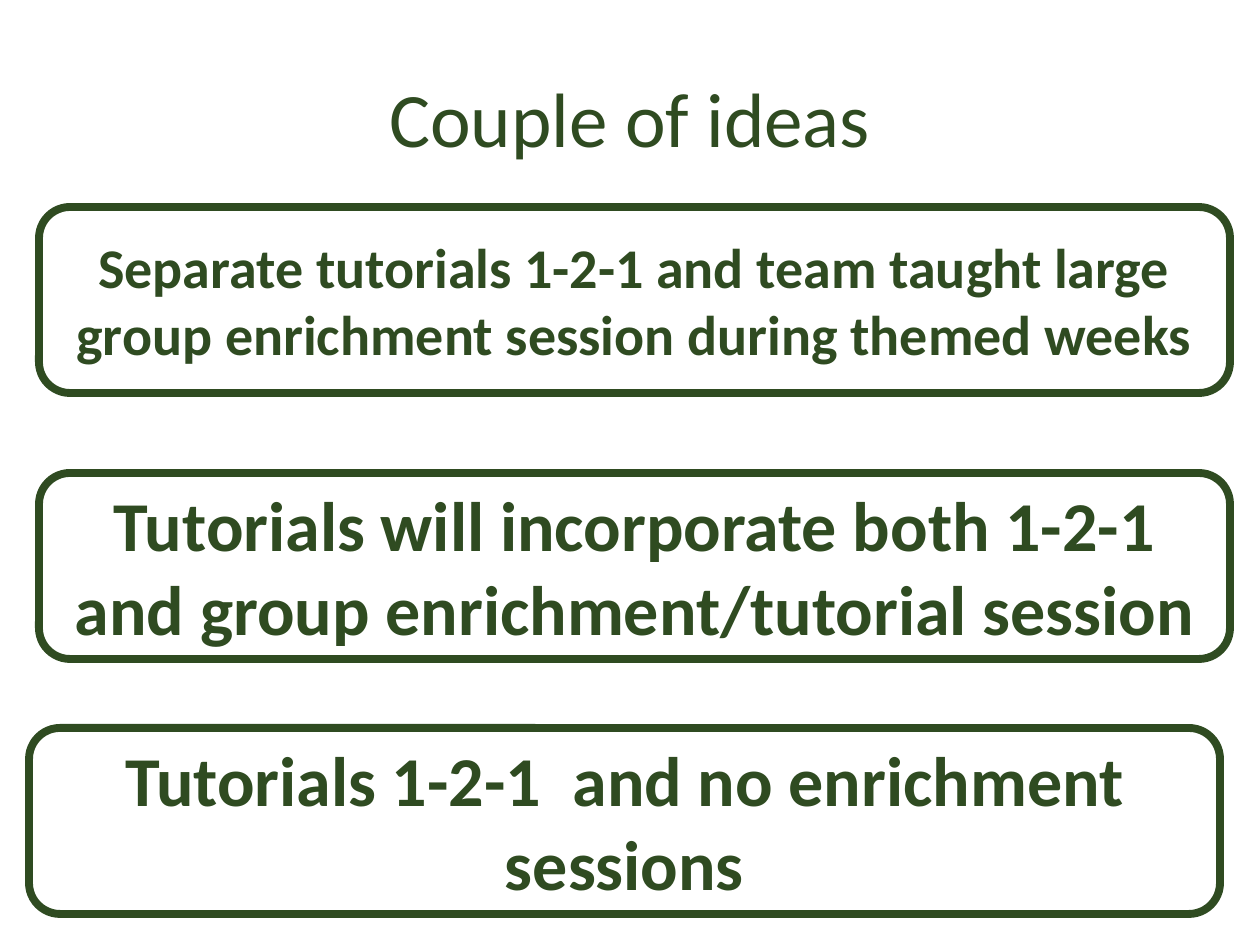
from pptx import Presentation
from pptx import util as u
from pptx.dml.color import RGBColor
from pptx.enum import shapes, text

PX = u.Inches(1) // 126
GREEN = "2F4B21"
FONT = "Calibri"
IDEA_SIZE = (1191, 186)
IDEAS = [
    (39, 207, 32, "Separate tutorials 1-2-1 and team taught large group "
                  "enrichment session during themed weeks"),
    (39, 473, 40, "Tutorials will incorporate both 1-2-1 and group "
                  "enrichment/tutorial session"),
    (29, 728, 40, "Tutorials 1-2-1  and no enrichment sessions"),
]


def px(*lengths):
    return [length * PX for length in lengths]


def color(value):
    return RGBColor.from_string(value)


def write(frame, wording, size, bold=False):
    """Put centred, wrapping text in the middle of a frame."""
    frame.word_wrap = True
    frame.vertical_anchor = text.MSO_ANCHOR.MIDDLE
    frame.text = wording
    paragraph = frame.paragraphs[0]
    paragraph.alignment = text.PP_ALIGN.CENTER
    font = paragraph.runs[0].font
    font.name, font.size, font.bold = FONT, u.Pt(size), bold
    font.color.rgb = color(GREEN)


def add_title(slide, wording):
    title = slide.shapes.add_textbox(*px(63, 38, 1134, 158))
    write(title.text_frame, wording, 44)


def add_idea(slide, left, top, size, wording):
    idea = slide.shapes.add_shape(
        shapes.MSO_SHAPE.ROUNDED_RECTANGLE, *px(left, top, *IDEA_SIZE))
    idea.shadow.inherit = False
    idea.fill.background()
    idea.line.color.rgb = color(GREEN)
    idea.line.width = u.Pt(4.5)
    write(idea.text_frame, wording, size, bold=True)


def main():
    deck = Presentation()
    deck.slide_width, deck.slide_height = px(1260, 945)
    slide = deck.slides.add_slide(deck.slide_layouts[6])
    add_title(slide, "Couple of ideas")
    for idea in IDEAS:
        add_idea(slide, *idea)
    deck.save("out.pptx")


if __name__ == "__main__":
    main()
